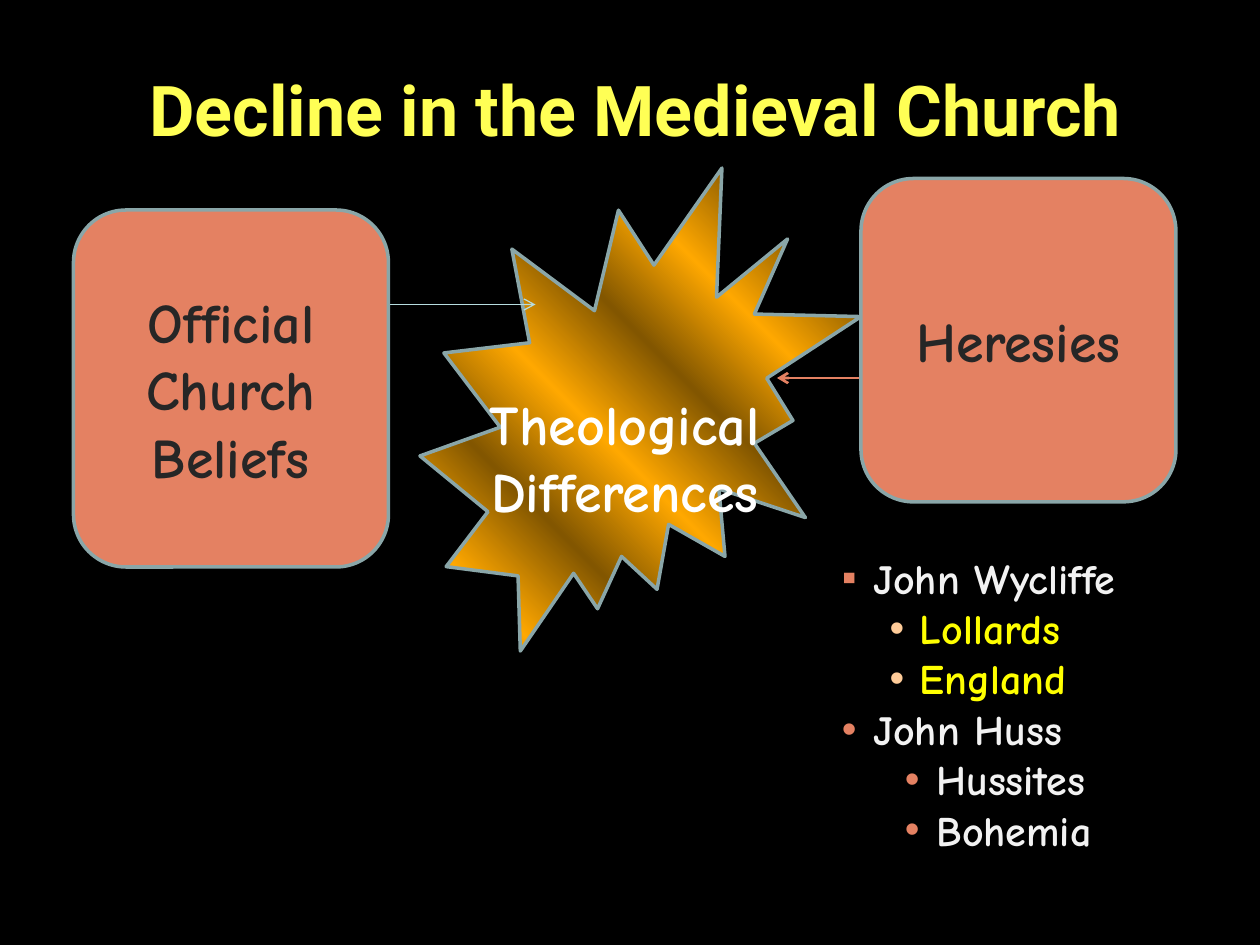
from lxml import etree
from pptx import Presentation
from pptx.dml.color import RGBColor
from pptx.enum.shapes import MSO_CONNECTOR as CONNECTOR, MSO_SHAPE as SHAPE
from pptx.enum.text import MSO_ANCHOR as ANCHOR, PP_ALIGN as ALIGN
from pptx.oxml import parse_xml
from pptx.oxml.ns import nsdecls, qn
from pptx.util import Inches, Pt

COLUMNS, ROWS = 120, 90  # square cells, a twelfth of an inch each
CORAL, STEEL, ICE = "E48162", "8AA6A8", "B6DCDF"
INK, WHITE, PALE = "262626", "FFFFFF", "F2F2F2"
YELLOW, PEACH = "FFFF00", "FFCC99"

deck = Presentation()
deck.slide_width, deck.slide_height = Inches(10), Inches(7.5)
cell = deck.slide_width // COLUMNS
slide = deck.slides.add_slide(deck.slide_layouts[6])
shapes = slide.shapes


def rgb(code):
    return RGBColor.from_string(code)


def write(paragraph, text, size, color, font="Comic Neue"):
    for i, line in enumerate(text.split("\n")):
        if i:
            paragraph.add_line_break()
        run = paragraph.add_run()
        run.text = line
        run.font.name, run.font.size, run.font.bold = font, Pt(size), True
        run.font.color.rgb = rgb(color)


slide.background.fill.solid()
slide.background.fill.fore_color.rgb = rgb("000000")

# Title
title = shapes.add_textbox(3 * cell, int(5.75 * cell), 115 * cell, int(9.25 * cell))
title.text_frame.word_wrap = True
heading = title.text_frame.paragraphs[0]
heading.alignment = ALIGN.CENTER
write(heading, "Decline in the Medieval Church", 40, "FFFF55", "Roboto")

# Burst with alternating dark and bright gold bands
burst = shapes.add_shape(SHAPE.EXPLOSION2, 40 * cell, 16 * cell, 42 * cell, 46 * cell)
burst.shadow.inherit = False
burst.line.color.rgb, burst.line.width = rgb(STEEL), Pt(2)
burst.fill.gradient()
burst.fill.gradient_angle = 45  # counter-clockwise
bands = burst._element.spPr.find(qn("a:gradFill")).find(qn("a:gsLst"))
for stop in list(bands):
    bands.remove(stop)
for i, position in enumerate((0, 13, 28, 43, 58, 72, 87, 100)):
    gold = "FFA800" if i % 2 else "825600"
    bands.append(parse_xml(f'<a:gs {nsdecls("a")} pos="{position * 1000}">'
                           f'<a:srgbClr val="{gold}"/></a:gs>'))

# Arrows towards the burst; the right one starts underneath its box
for start, end, row, color, width in ((84, 74, 36, CORAL, 1.5), (37, 51, 29, ICE, 0.75)):
    arrow = shapes.add_connector(CONNECTOR.STRAIGHT, start * cell, row * cell,
                                 end * cell, row * cell)
    arrow.line.color.rgb, arrow.line.width = rgb(color), Pt(width)
    etree.SubElement(arrow.line._get_or_add_ln(), qn("a:tailEnd"), type="arrow")
    etree.SubElement(arrow._element.spPr, qn("a:effectLst"))

# The two opposing sides
for text, column, row, height in (("Official Church\nBeliefs", 7, 20, 34),
                                  ("Heresies", 82, 17, 30.8)):
    side = shapes.add_shape(SHAPE.ROUNDED_RECTANGLE, column * cell, row * cell,
                            30 * cell, int(height * cell))
    side.shadow.inherit = False
    side.fill.solid()
    side.fill.fore_color.rgb = rgb(CORAL)
    side.line.color.rgb, side.line.width = rgb(STEEL), Pt(2)
    side.text_frame.vertical_anchor = ANCHOR.MIDDLE
    side.text_frame.word_wrap = True
    belief = side.text_frame.paragraphs[0]
    belief.alignment = ALIGN.CENTER
    write(belief, text, 32, INK)

# Words over the burst
clash = shapes.add_textbox(43 * cell, int(36.5 * cell), 33 * cell, 14 * cell)
clash.text_frame.word_wrap = True
differences = clash.text_frame.paragraphs[0]
differences.alignment = ALIGN.CENTER
write(differences, "Theological\nDifferences", 32, WHITE)

# Heretics with their followers and lands
heretics = shapes.add_textbox(79 * cell, 52 * cell, 35 * cell, 30 * cell).text_frame
heretics.word_wrap = True
entries = (
    ("John Wycliffe", 0, 0.25, 0.25, "▪", CORAL, PALE),
    ("Lollards", 1, 0.62, 0.24, "•", PEACH, YELLOW),
    ("England", 1, 0.62, 0.24, "•", PEACH, YELLOW),
    ("John Huss", 0, 0.25, 0.25, "•", CORAL, PALE),
    ("Hussites", 1, 0.75, 0.25, "•", CORAL, PALE),
    ("Bohemia", 1, 0.75, 0.25, "•", CORAL, PALE),
)
for i, (text, level, margin, hanging, mark, mark_color, color) in enumerate(entries):
    entry = heretics.add_paragraph() if i else heretics.paragraphs[0]
    entry.level = level
    layout = entry._p.get_or_add_pPr()
    layout.set("marL", str(Inches(margin)))
    layout.set("indent", str(-Inches(hanging)))
    bullet_color = etree.SubElement(layout, qn("a:buClr"))
    etree.SubElement(bullet_color, qn("a:srgbClr"), val=mark_color)
    etree.SubElement(layout, qn("a:buFont"), typeface="Arial")
    etree.SubElement(layout, qn("a:buChar"), char=mark)
    write(entry, text, 24, color)

deck.save("out.pptx")
